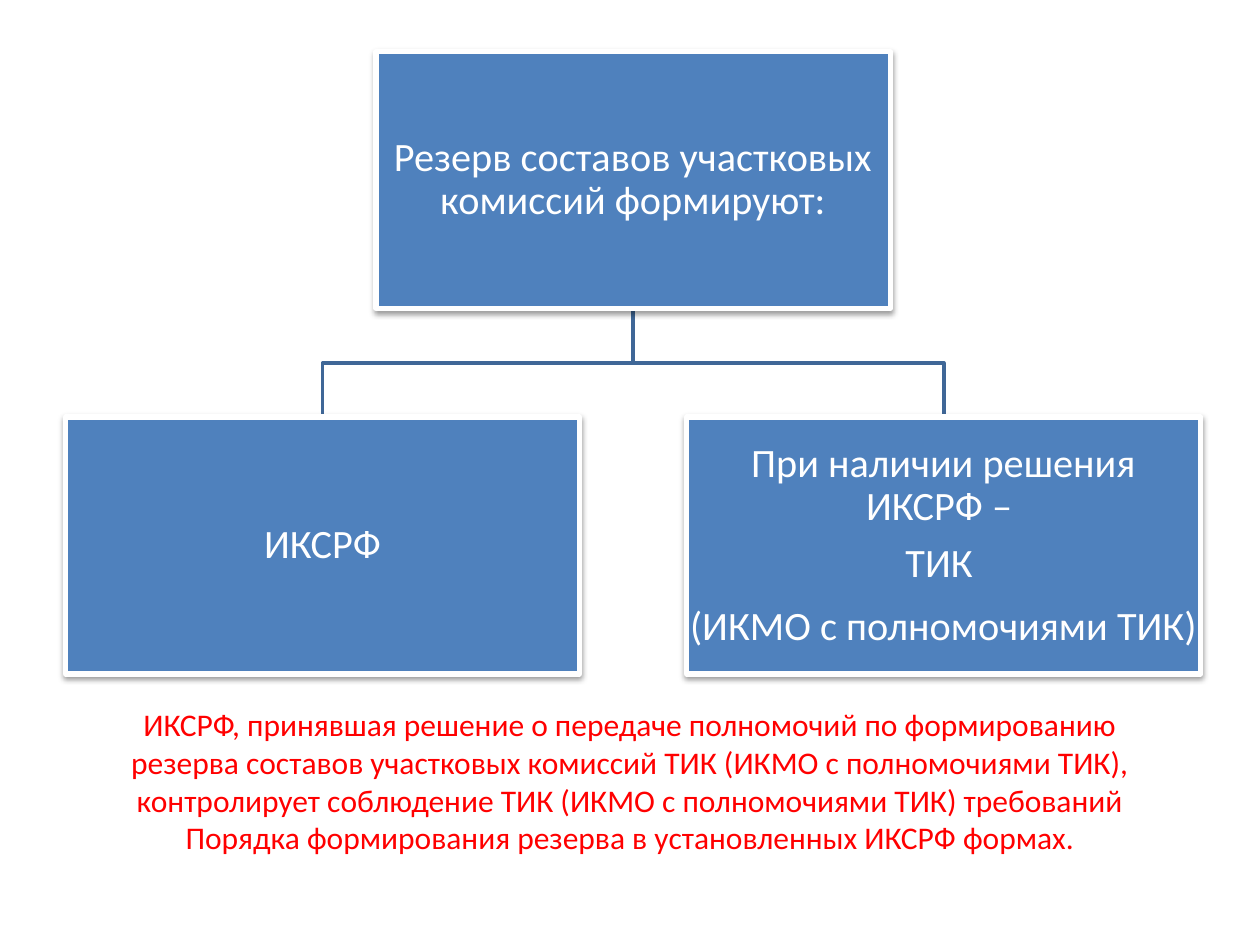
from lxml.etree import SubElement
from pptx import Presentation
from pptx.dml.color import RGBColor
from pptx.enum.shapes import MSO_SHAPE as Shape
from pptx.enum.text import MSO_ANCHOR as Anchor, PP_ALIGN as Align
from pptx.oxml.ns import qn
from pptx.util import Inches, Pt

COLORS = {"box": "4F81BD", "branch": "3F6797", "white": "FFFFFF",
          "note": "FF0000", "shadow": "000000"}
FONT = "Calibri"

# Chart grid: columns and rows may be fractional
LEFT, TOP = Inches(0.52), Inches(0.41)
BOX_W, BOX_H = Inches(4.08), Inches(2.04)
COL_STEP, ROW_STEP = Inches(4.93), Inches(2.9)

ROOT = (0.5, 0, ["Резерв составов участковых комиссий формируют:"])
BODIES = [
    (0, 1, ["ИКСРФ"]),
    (1, 1, ["При наличии решения ИКСРФ – ", "ТИК ", "(ИКМО с полномочиями ТИК)"]),
]
NOTE = ("ИКСРФ, принявшая решение о передаче полномочий по формированию резерва "
        "составов участковых комиссий ТИК (ИКМО с полномочиями ТИК), контролирует "
        "соблюдение ТИК (ИКМО с полномочиями ТИК) требований Порядка формирования "
        "резерва в установленных ИКСРФ формах.")


def color(name):
    return RGBColor.from_string(COLORS[name])


def cell(col, row):
    """Left and top of a grid cell."""
    return int(LEFT + col * COL_STEP), int(TOP + row * ROW_STEP)


def write(frame, lines, size, ink, inset):
    """Fill a frame with centred paragraphs, one run each."""
    frame.word_wrap = True
    frame.vertical_anchor = Anchor.MIDDLE
    frame.margin_left = frame.margin_right = Inches(inset)
    frame.margin_top = frame.margin_bottom = Inches(min(inset, 0.05))
    for index, line in enumerate(lines):
        paragraph = frame.add_paragraph() if index else frame.paragraphs[0]
        paragraph.alignment = Align.CENTER
        run = paragraph.add_run()
        run.text = line
        run.font.size = Pt(size)
        run.font.name = FONT
        run.font.color.rgb = color(ink)


def cast_shadow(shape):
    """Soft shadow straight below the shape."""
    shape.shadow.inherit = False
    effects = shape.element.spPr.find(qn("a:effectLst"))
    shadow = SubElement(effects, qn("a:outerShdw"), blurRad=str(Pt(3.1)),
                        dist=str(Pt(1.6)), dir="5400000", rotWithShape="0")
    tint = SubElement(shadow, qn("a:srgbClr"), val=COLORS["shadow"])
    SubElement(tint, qn("a:alpha"), val="38000")


def add_box(slide, col, row, lines):
    box = slide.shapes.add_shape(Shape.RECTANGLE, *cell(col, row), BOX_W, BOX_H)
    box.fill.solid()
    box.fill.fore_color.rgb = color("box")
    box.line.color.rgb = color("white")
    box.line.width = Pt(3)
    cast_shadow(box)
    write(box.text_frame, lines, 23, "white", 0.02)
    # Tight lines, except for the closing remark in the third paragraph
    for paragraph in box.text_frame.paragraphs[:2]:
        paragraph.line_spacing = 0.9
        paragraph.space_after = Pt(8)


def add_branch(slide, parent, child):
    """Elbow line from the bottom of one box to the top of another."""
    parent_left, parent_top = cell(*parent)
    child_left, end_y = cell(*child)
    start_x, end_x = parent_left + BOX_W // 2, child_left + BOX_W // 2
    start_y = parent_top + BOX_H
    bend_y = (start_y + end_y) // 2
    # Points are whole EMU, since the builder rounds coordinates
    outline = slide.shapes.build_freeform(start_x, start_y, scale=1.0)
    outline.add_line_segments([(start_x, bend_y), (end_x, bend_y), (end_x, end_y)],
                              close=False)
    branch = outline.convert_to_shape()
    branch.fill.background()
    branch.line.color.rgb = color("branch")
    branch.line.width = Pt(2)
    branch.shadow.inherit = False


def add_note(slide, width):
    note = slide.shapes.add_textbox(int(width * 0.075), Inches(5.39),
                                    int(width * 0.85), Inches(1.61))
    write(note.text_frame, [NOTE], 18, "note", 0.1)


def main():
    deck = Presentation()
    deck.slide_width, deck.slide_height = Inches(10), Inches(7.5)
    slide = deck.slides.add_slide(deck.slide_layouts[6])

    # Note under the chart
    add_note(slide, deck.slide_width)

    # Branches first, so that the boxes lie over their ends
    for col, row, _ in reversed(BODIES):
        add_branch(slide, ROOT[:2], (col, row))
    for col, row, lines in [ROOT, *BODIES]:
        add_box(slide, col, row, lines)

    deck.save("out.pptx")


if __name__ == "__main__":
    main()
